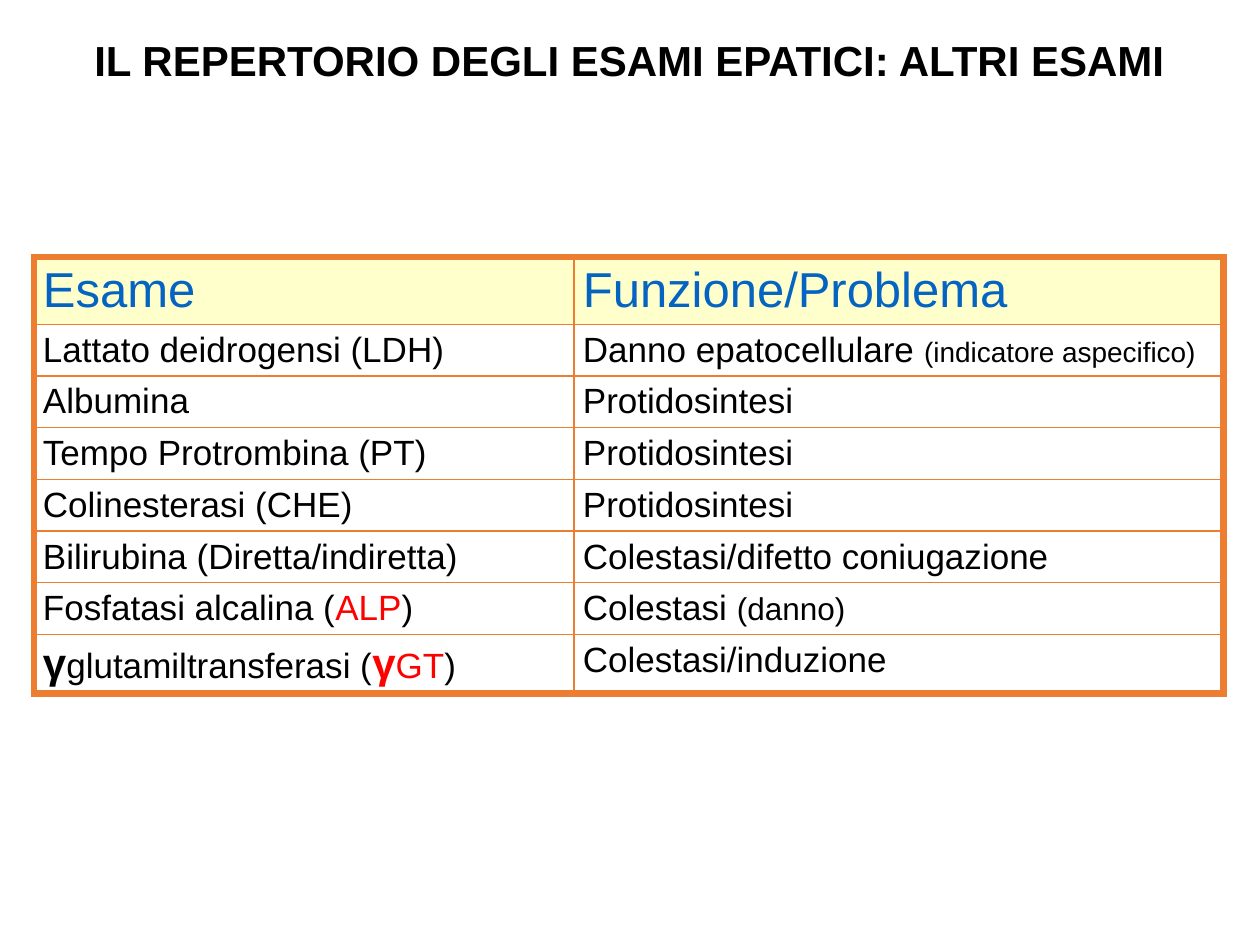
from lxml.etree import SubElement
from pptx import Presentation
from pptx.dml.color import RGBColor
from pptx.enum.text import PP_ALIGN
from pptx.oxml.ns import qn
from pptx.util import Emu, Pt

BLACK, RED, BLUE = "000000", "FF0000", "0563C1"
ORANGE, CREAM = "ED7D31", "FFFFCC"


def px(n):
    return Emu(round(n * 914400 / 126))


def rgb(value):
    return RGBColor.from_string(value)


class Deck:
    font = "Arial"
    outer, inner = 4.5, 1

    def __init__(self, width, height):
        self.prs = Presentation()
        self.prs.slide_width, self.prs.slide_height = px(width), px(height)
        self.s = self.prs.slides.add_slide(self.prs.slide_layouts[6])

    def style(self, font, size, color, bold=False):
        font.name, font.size, font.bold = self.font, Pt(size), bold
        font.color.rgb = rgb(color)

    def set_text(self, p, content, size, color, bold=False):
        if isinstance(content, str):
            p.text = content
            self.style(p.font, size, color, bold)
            return
        for text, *look in content:
            r = p.add_run()
            r.text = text
            self.style(r.font, *(look or (size, color, bold)))

    def title(self, x, y, w, h, text):
        tf = self.s.shapes.add_textbox(px(x), px(y), px(w), px(h)).text_frame
        tf.word_wrap = True
        p = tf.paragraphs[0]
        p.alignment = PP_ALIGN.CENTER
        self.set_text(p, text, 24, BLACK, True)

    def border(self, cell, side, width):
        ln = SubElement(cell._tc.get_or_add_tcPr(), qn(f"a:ln{side}"), w=str(Pt(width)))
        fill = SubElement(ln, qn("a:solidFill"))
        SubElement(fill, qn("a:srgbClr"), val=ORANGE)

    def table(self, x, y, widths, heights, rows):
        table = self.s.shapes.add_table(
            len(rows), len(widths), px(x), px(y), px(sum(widths)), px(sum(heights))
        ).table
        table.first_row = table.horz_banding = False
        for column, width in zip(table.columns, widths):
            column.width = px(width)
        last_row, last_col = len(rows) - 1, len(widths) - 1
        for i, (height, row) in enumerate(zip(heights, rows)):
            table.rows[i].height = px(height)
            for j, content in enumerate(row):
                cell = table.cell(i, j)
                cell.margin_left = cell.margin_right = px(9)
                edges = {"L": j == 0, "R": j == last_col, "T": i == 0, "B": i == last_row}
                for side, is_outer in edges.items():
                    self.border(cell, side, self.outer if is_outer else self.inner)
                p = cell.text_frame.paragraphs[0]
                if i == 0:
                    cell.fill.solid()
                    cell.fill.fore_color.rgb = rgb(CREAM)
                    self.set_text(p, content, 28, BLUE)
                else:
                    cell.fill.background()
                    self.set_text(p, content, 20, BLACK)


def main():
    rows = [
        ("Esame", "Funzione/Problema"),
        ("Lattato deidrogensi (LDH)",
         [("Danno epatocellulare ",), ("(indicatore aspecifico)", 16, BLACK)]),
        ("Albumina", "Protidosintesi"),
        ("Tempo Protrombina (PT)", "Protidosintesi"),
        ("Colinesterasi (CHE)", "Protidosintesi"),
        ("Bilirubina (Diretta/indiretta)", "Colestasi/difetto coniugazione"),
        ([("Fosfatasi alcalina (",), ("ALP", 20, RED), (")",)],
         [("Colestasi ",), ("(danno)", 18, BLACK)]),
        ([("γ", 24, BLACK, True), ("glutamiltransferasi (",),
          ("γ", 24, RED, True), ("GT", 20, RED), (")",)],
         "Colestasi/induzione"),
    ]
    deck = Deck(1260, 945)
    deck.table(34, 257, (540, 650), (67, *[51] * 6, 58), rows)
    deck.title(-1, 28, 1261, 64, "IL REPERTORIO DEGLI ESAMI EPATICI: ALTRI ESAMI")
    deck.prs.save("out.pptx")


if __name__ == "__main__":
    main()
